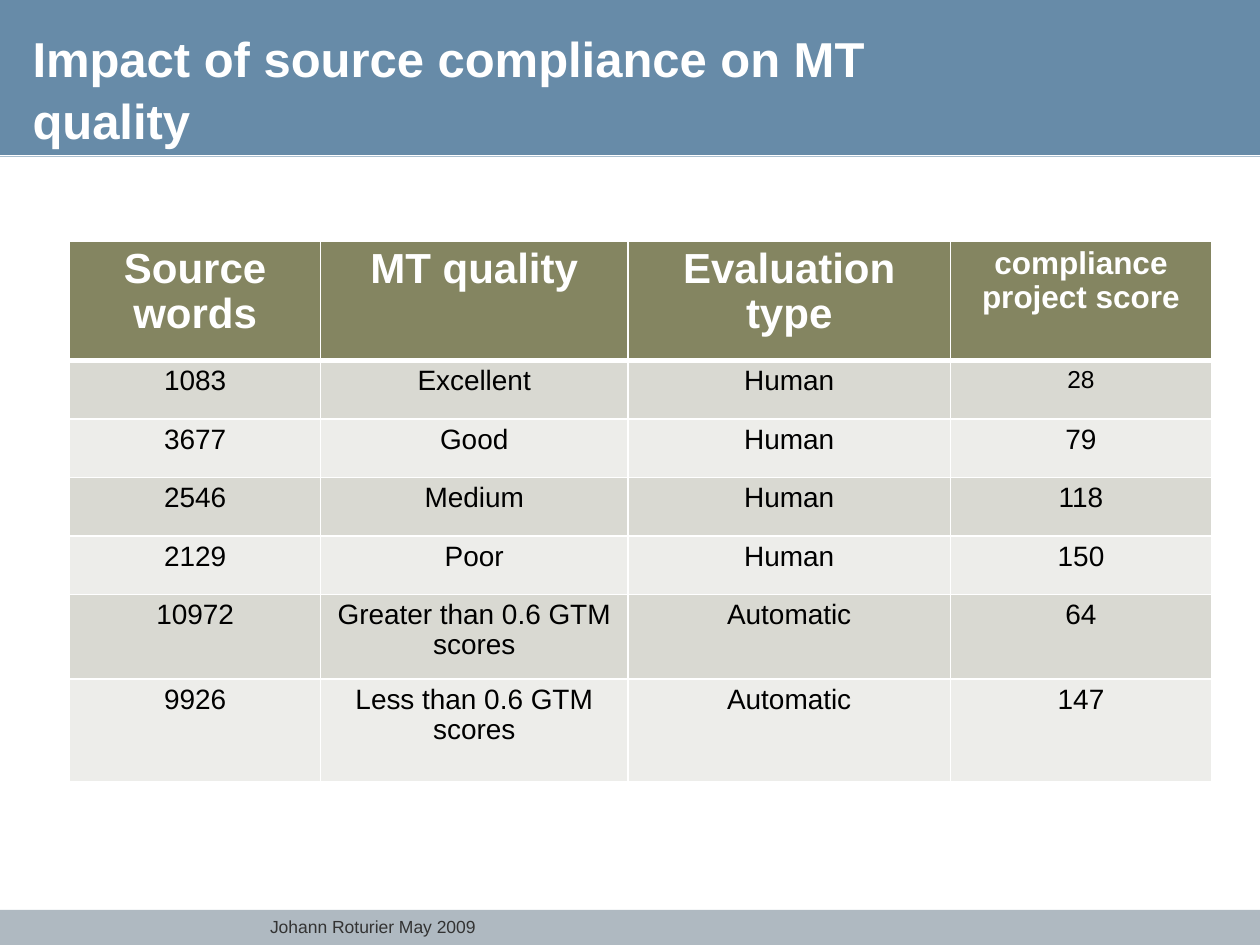
import dataclasses
import typing

import lxml.etree
import pptx
import pptx.dml.color
import pptx.enum.shapes
import pptx.enum.text
import pptx.oxml
import pptx.oxml.ns
import pptx.util

Pt = pptx.util.Pt
ALIGN = pptx.enum.text.PP_ALIGN
ANCHOR = pptx.enum.text.MSO_ANCHOR

COLOURS = {
    "banner": "678BA8",
    "footer": "AFB9C1",
    "rule": "ABBFCF",
    "footer_text": "333333",
    "white": "FFFFFF",
    "black": "000000",
    "header": "848561",
    "dark_band": "D9D9D2",
    "light_band": "EDEDEA",
}
PAGE_WIDTH, PAGE_HEIGHT = 720, 540
COLUMN_WIDTHS = [143.5, 175.5, 184.5, 149]
ROW_HEIGHTS = [68.4, 33.4, 33.4, 33.4, 33.4, 48.4, 58.4]
ROWS = [
    ["Source words", "MT quality", "Evaluation type", "compliance project score"],
    ["1083", "Excellent", "Human", "28"],
    ["3677", "Good", "Human", "79"],
    ["2546", "Medium", "Human", "118"],
    ["2129", "Poor", "Human", "150"],
    ["10972", "Greater than 0.6 GTM scores", "Automatic", "64"],
    ["9926", "Less than 0.6 GTM scores", "Automatic", "147"],
]
SPECIAL_SIZES = {(0, 3): 18, (1, 3): 14}


@dataclasses.dataclass
class Area:
    left: float
    top: float
    width: float
    height: float

    def lengths(self) -> list[int]:
        return [Pt(value) for value in dataclasses.astuple(self)]


@dataclasses.dataclass
class Style:
    size: float
    colour: str
    bold: bool = False
    align: typing.Any = ALIGN.CENTER
    spacing: float = 1.0


@dataclasses.dataclass
class Band:
    area: Area
    colour: str


@dataclasses.dataclass
class Label:
    area: Area
    text: str
    style: Style
    wrap: bool
    insets: tuple[float, float]


BANDS = [
    Band(Area(0, 520, PAGE_WIDTH, 20), "footer"),
    Band(Area(0, 0, PAGE_WIDTH, 88.5), "banner"),
]
LABELS = [
    Label(Area(154, 523.5, 118, 12), "Johann Roturier May 2009",
          Style(10, "footer_text"), False, (0, 0)),
    Label(Area(11.5, 12.5, 528, 75), "Impact of source compliance on MT quality",
          Style(28, "white", True, ALIGN.LEFT, 1.05), True, (7.2, 3.6)),
]


def rgb(name: str) -> pptx.dml.color.RGBColor:
    return pptx.dml.color.RGBColor.from_string(COLOURS[name])


def write_text(frame: typing.Any, text: str, style: Style) -> None:
    para = frame.paragraphs[0]
    para.alignment = style.align
    para.line_spacing = style.spacing
    span = para.add_run()
    span.text = text
    span.font.name = "Arial"
    span.font.size = Pt(style.size)
    span.font.bold = style.bold
    span.font.color.rgb = rgb(style.colour)


def draw_band(page: typing.Any, band: Band) -> None:
    box = page.shapes.add_shape(
        pptx.enum.shapes.MSO_SHAPE.RECTANGLE, *band.area.lengths())
    box.shadow.inherit = False
    box.fill.solid()
    box.fill.fore_color.rgb = rgb(band.colour)
    box.line.fill.background()


def draw_rule(page: typing.Any, top: float) -> None:
    rule = page.shapes.add_connector(
        pptx.enum.shapes.MSO_CONNECTOR.STRAIGHT,
        Pt(0), Pt(top), Pt(PAGE_WIDTH), Pt(top))
    rule.line.color.rgb = rgb("rule")
    rule.line.width = Pt(0.75)
    lxml.etree.SubElement(
        rule.element.spPr, pptx.oxml.ns.qn("a:effectLst"))


def draw_label(page: typing.Any, label: Label) -> None:
    frame = page.shapes.add_textbox(*label.area.lengths()).text_frame
    frame.word_wrap = label.wrap
    frame.vertical_anchor = ANCHOR.MIDDLE
    side, edge = label.insets
    frame.margin_left = frame.margin_right = Pt(side)
    frame.margin_top = frame.margin_bottom = Pt(edge)
    write_text(frame, label.text, label.style)


def draw_borders(cell: typing.Any, widths: dict[str, float]) -> None:
    properties = cell._tc.get_or_add_tcPr()
    for side, width in widths.items():
        properties.append(pptx.oxml.parse_xml(
            f'<a:ln{side} {pptx.oxml.ns.nsdecls("a")} w="{Pt(width)}">'
            f'<a:solidFill><a:srgbClr val="{COLOURS["white"]}"/></a:solidFill>'
            f'</a:ln{side}>'))


def draw_table(page: typing.Any) -> None:
    area = Area(39.75, 137.75, sum(COLUMN_WIDTHS), sum(ROW_HEIGHTS))
    table = page.shapes.add_table(
        len(ROWS), len(COLUMN_WIDTHS), *area.lengths()).table
    for column, width in zip(table.columns, COLUMN_WIDTHS):
        column.width = Pt(width)
    for row, height in zip(table.rows, ROW_HEIGHTS):
        row.height = Pt(height)
    for row_index, texts in enumerate(ROWS):
        is_header = row_index == 0
        band = "dark_band" if row_index % 2 else "light_band"
        widths = {"L": 1, "R": 1, "T": 3 if row_index == 1 else 1,
                  "B": 3 if is_header else 1}
        for column_index, text in enumerate(texts):
            cell = table.cell(row_index, column_index)
            draw_borders(cell, widths)
            cell.fill.solid()
            cell.fill.fore_color.rgb = rgb("header" if is_header else band)
            size = SPECIAL_SIZES.get(
                (row_index, column_index), 24 if is_header else 16)
            colour = "white" if is_header else "black"
            write_text(cell.text_frame, text,
                       Style(size, colour, is_header, spacing=0.96))


def main() -> None:
    deck = pptx.Presentation()
    deck.slide_width = Pt(PAGE_WIDTH)
    deck.slide_height = Pt(PAGE_HEIGHT)
    page = deck.slides.add_slide(deck.slide_layouts[6])
    for band in BANDS:
        draw_band(page, band)
    draw_rule(page, 89.25)
    for label in LABELS:
        draw_label(page, label)
    draw_table(page)
    deck.save("out.pptx")


if __name__ == "__main__":
    main()
